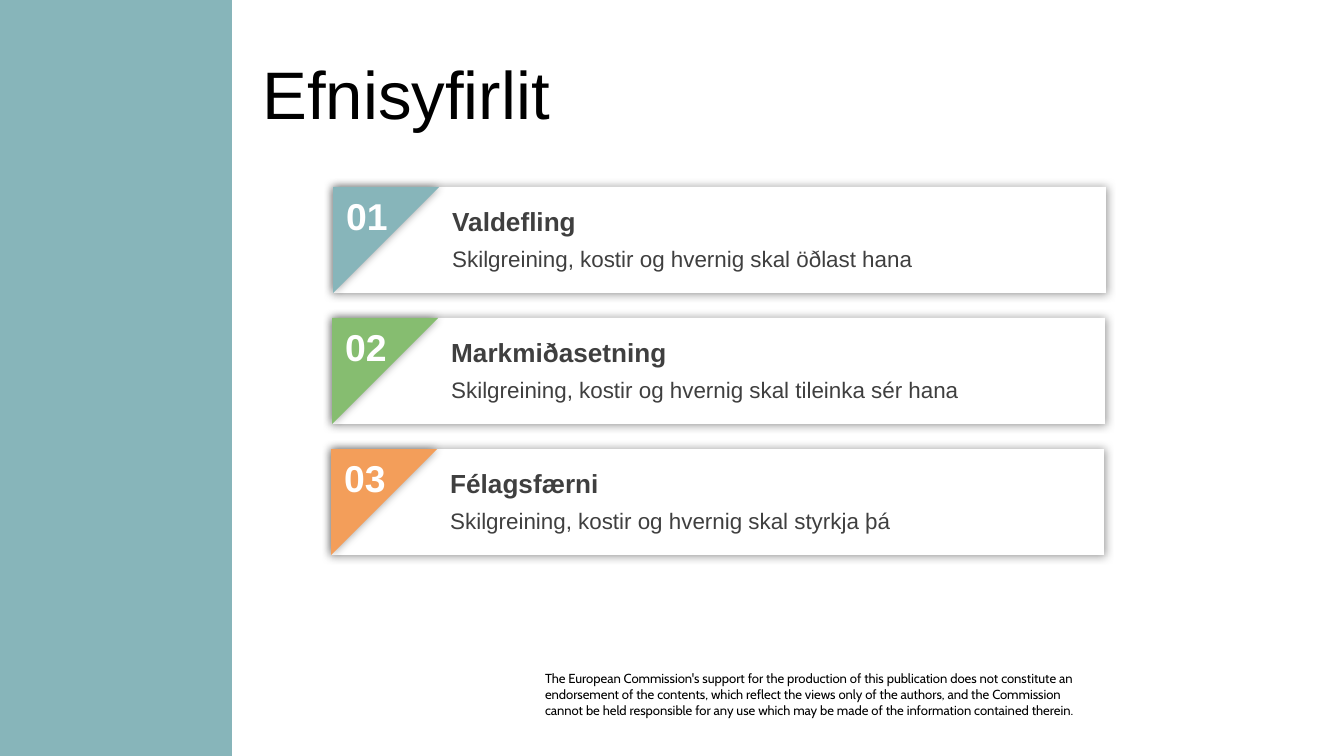
from lxml import etree
from pptx import Presentation
from pptx.dml.color import RGBColor
from pptx.enum.shapes import MSO_SHAPE
from pptx.enum.text import MSO_ANCHOR, MSO_AUTO_SIZE, PP_ALIGN
from pptx.oxml.ns import qn
from pptx.util import Emu, Pt

RECTANGLE = MSO_SHAPE.RECTANGLE
RIGHT_TRIANGLE = MSO_SHAPE.RIGHT_TRIANGLE
LEFT = PP_ALIGN.LEFT
TOP = MSO_ANCHOR.TOP
MIDDLE = MSO_ANCHOR.MIDDLE
NO_AUTOFIT = MSO_AUTO_SIZE.NONE

EMU_PER_PX = 914400 / 134.4
SLIDE_WIDTH, SLIDE_HEIGHT = 1344, 756
CARD_LEFT, CARD_TOP = 333, 187
CARD_WIDTH, CARD_HEIGHT = 773, 106
CARD_PITCH = 131
TEAL, GREEN, ORANGE = "87B5BA", "86BD70", "F39E5A"
WHITE, BLACK, GREY = "FFFFFF", "000000", "3F3F3F"

TOPICS = [
    ("Valdefling", "Skilgreining, kostir og hvernig skal öðlast hana", TEAL),
    ("Markmiðasetning", "Skilgreining, kostir og hvernig skal tileinka sér hana", GREEN),
    ("Félagsfærni", "Skilgreining, kostir og hvernig skal styrkja þá", ORANGE),
]
DISCLAIMER = (
    "The European Commission's support for the production of this publication "
    "does not constitute an endorsement of the contents, which reflect the views "
    "only of the authors, and the Commission\n"
    "cannot be held responsible for any use which may be made of the information "
    "contained therein."
)


def px(length):
    return Emu(round(length * EMU_PER_PX))


def color(hex_string):
    return RGBColor.from_string(hex_string)


def add_soft_shadow(shape):
    """Surround the shape with an even, blurred black shadow."""
    effects = etree.SubElement(shape._element.spPr, qn("a:effectLst"))
    shadow = etree.SubElement(effects, qn("a:outerShdw"), blurRad=str(Pt(5)),
                              dist="0", dir="0", algn="ctr", rotWithShape="0")
    black = etree.SubElement(shadow, qn("a:srgbClr"), val=BLACK)
    etree.SubElement(black, qn("a:alpha"), val="40000")


def add_block(shapes, kind, box, fill, soft_shadow=False):
    shape = shapes.add_shape(kind, *map(px, box))
    shape.fill.solid()
    shape.fill.fore_color.rgb = color(fill)
    shape.line.fill.background()
    if soft_shadow:
        add_soft_shadow(shape)
    else:
        shape.shadow.inherit = False
    return shape


def write_text(shape, text, size, hex_string, font="Arial", bold=False, anchor=TOP):
    frame = shape.text_frame
    frame.word_wrap = True
    frame.auto_size = NO_AUTOFIT
    frame.vertical_anchor = anchor
    frame.text = text
    for paragraph in frame.paragraphs:
        paragraph.alignment = LEFT
        for run in paragraph.runs:
            run.font.name = font
            run.font.size = Pt(size)
            run.font.bold = bold
            run.font.color.rgb = color(hex_string)


def add_text(shapes, box, text, size, hex_string, **style):
    shape = shapes.add_textbox(*map(px, box))
    write_text(shape, text, size, hex_string, **style)
    return shape


def set_title(slide, text):
    title = slide.shapes.title
    title.left, title.top, title.width, title.height = map(px, (249, 50, 968, 85))
    write_text(title, text, 36, BLACK, anchor=MIDDLE)


def add_disclaimer(slide):
    shape = add_text(slide.shapes, (545, 671, 560, 47), DISCLAIMER, 7, BLACK, font="Cabin")
    frame = shape.text_frame
    frame.margin_left = frame.margin_top = frame.margin_right = frame.margin_bottom = 0


def add_topic(slide, index, heading, description, accent):
    """Add one numbered card; each card sits one px left of the one above."""
    left = CARD_LEFT - index
    top = CARD_TOP + index * CARD_PITCH
    text_left = left + CARD_HEIGHT

    card = slide.shapes.add_group_shape().shapes
    add_block(card, RECTANGLE, (left, top, CARD_WIDTH, CARD_HEIGHT), WHITE, soft_shadow=True)
    corner = add_block(card, RIGHT_TRIANGLE, (left, top, CARD_HEIGHT, CARD_HEIGHT),
                       accent, soft_shadow=True)
    corner.rotation = 90

    add_text(slide.shapes, (left, top, 78, 59), f"{index + 1:02d}", 20, WHITE, bold=True)

    texts = slide.shapes.add_group_shape().shapes
    add_text(texts, (text_left, top + 12, 645, 46), heading, 14, GREY, bold=True)
    add_text(texts, (text_left, top + 52, 645, 40), description, 12, GREY)


def main():
    presentation = Presentation()
    presentation.slide_width = px(SLIDE_WIDTH)
    presentation.slide_height = px(SLIDE_HEIGHT)
    slide = presentation.slides.add_slide(presentation.slide_layouts.get_by_name("Title Only"))

    add_disclaimer(slide)
    add_block(slide.shapes, RECTANGLE, (0, 0, 232, SLIDE_HEIGHT), TEAL)
    set_title(slide, "Efnisyfirlit")
    for index, topic in enumerate(TOPICS):
        add_topic(slide, index, *topic)

    presentation.save("out.pptx")


if __name__ == "__main__":
    main()
